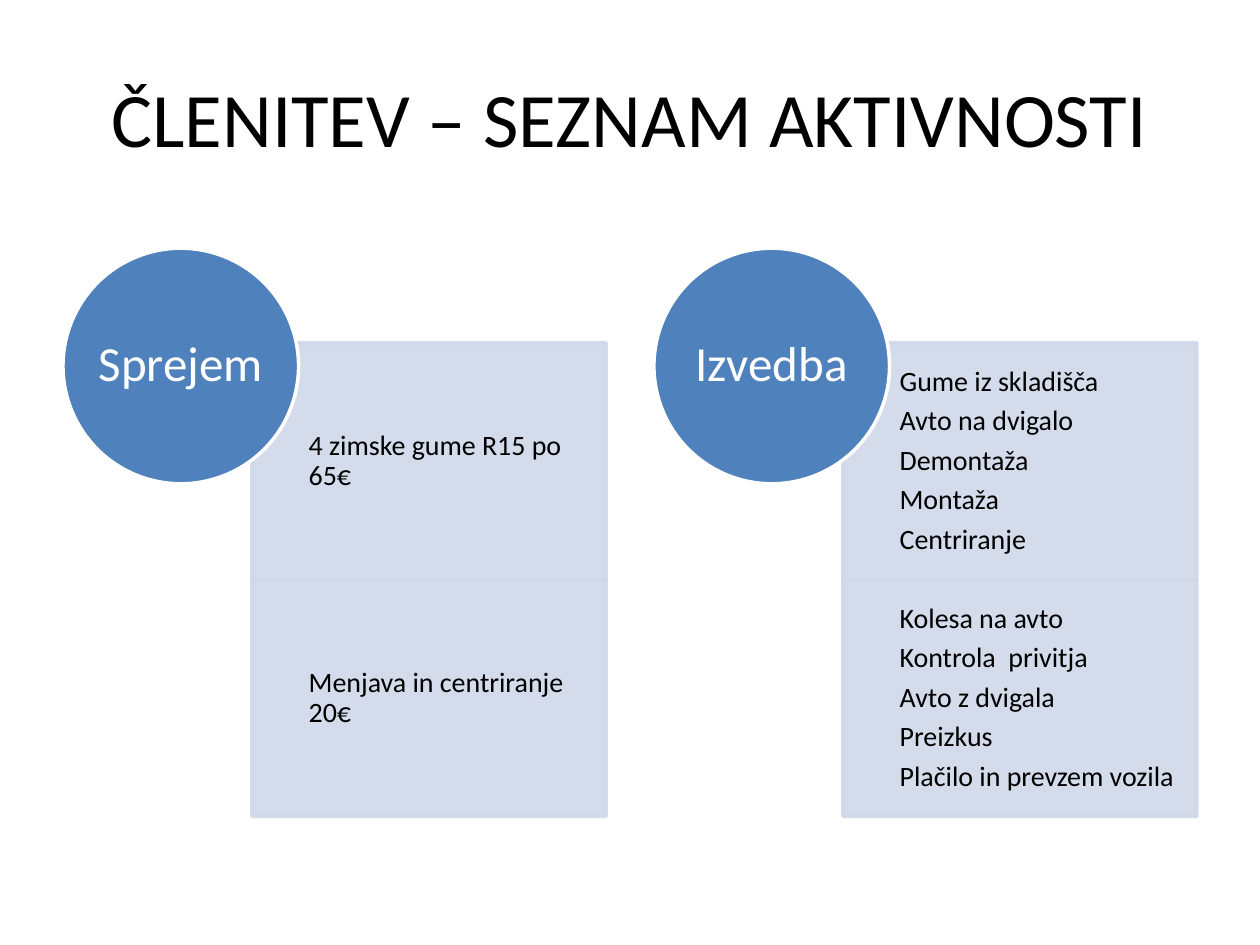
from lxml.etree import SubElement
from pptx import Presentation
from pptx.dml.color import RGBColor
from pptx.enum.shapes import MSO_SHAPE as SHAPE
from pptx.enum.text import MSO_ANCHOR as ANCHOR, PP_ALIGN as ALIGN
from pptx.oxml.ns import qn
from pptx.util import Inches, Pt

FONT = "Calibri"
BLACK, WHITE, BLUE, PALE = "000000", "FFFFFF", "4F81BD", "D0D8E8"
GROUP_LEFT, GROUP_STEP = 0.5, 4.69
CIRCLE_TOP, CIRCLE_SIZE = 1.97, 1.87
BOX_OFFSET, BOX_TOP, BOX_WIDTH, BOX_HEIGHT = 1.5, 2.72, 2.81, 1.88
GROUPS = [
    ("Sprejem", [["4 zimske gume R15 po 65€"], ["Menjava in centriranje 20€"]]),
    ("Izvedba", [
        ["Gume iz skladišča", "Avto na dvigalo", "Demontaža", "Montaža", "Centriranje"],
        ["Kolesa na avto", "Kontrola  privitja", "Avto z dvigala", "Preizkus",
         "Plačilo in prevzem vozila"],
    ]),
]


def paint(fmt, color, alpha=None):
    """Apply a solid colour, with optional opacity in percent, to a fill."""
    fmt.solid()
    fmt.fore_color.rgb = RGBColor.from_string(color)
    if alpha is not None:
        clr = fmt._xPr.find(qn("a:solidFill"))[0]
        SubElement(clr, qn("a:alpha")).set("val", str(alpha * 1000))


def write(sp, lines, size, color, align, insets, spacing=None, after=0):
    """Fill a shape with one paragraph per line."""
    tf = sp.text_frame
    tf.word_wrap = True
    tf.vertical_anchor = ANCHOR.MIDDLE
    tf.margin_left, tf.margin_top, tf.margin_right, tf.margin_bottom = map(Inches, insets)
    for i, line in enumerate(lines):
        p = tf.add_paragraph() if i else tf.paragraphs[0]
        p.alignment = align
        p.line_spacing = spacing
        p.space_after = Pt(after)
        r = p.add_run()
        r.text = line
        r.font.name = FONT
        r.font.size = Pt(size)
        r.font.color.rgb = RGBColor.from_string(color)


def add_title(s, text):
    """Add the centred slide title."""
    sp = s.shapes.add_textbox(*map(Inches, (0.5, 0.3, 9, 1.25)))
    write(sp, [text], 44, BLACK, ALIGN.CENTER, (0.1, 0.05, 0.1, 0.05))


def add_outlined(s, kind, box, fill, line, alpha=None):
    """Add a preset shape with a fill and a 2 pt outline."""
    sp = s.shapes.add_shape(kind, *map(Inches, box))
    sp.shadow.inherit = False
    paint(sp.fill, fill, alpha)
    paint(sp.line.fill, line, alpha)
    sp.line.width = Pt(2)
    return sp


def add_group(s, left, heading, boxes):
    """Add stacked activity boxes with a heading circle over their corner."""
    for i, lines in enumerate(boxes):
        box = (left + BOX_OFFSET, BOX_TOP + i * BOX_HEIGHT, BOX_WIDTH, BOX_HEIGHT)
        sp = add_outlined(s, SHAPE.RECTANGLE, box, PALE, PALE, 90)
        write(sp, lines, 16, BLACK, ALIGN.LEFT, (0.45, 0.12, 0.12, 0.12), 0.9, 5.3)
    circle = (left, CIRCLE_TOP, CIRCLE_SIZE, CIRCLE_SIZE)
    sp = add_outlined(s, SHAPE.OVAL, circle, BLUE, WHITE)
    write(sp, [heading], 28, WHITE, ALIGN.CENTER, (0, 0, 0, 0), 0.9)


def main():
    """Build and save the slide."""
    prs = Presentation()
    prs.slide_width, prs.slide_height = Inches(10), Inches(7.5)
    s = prs.slides.add_slide(prs.slide_layouts[6])
    add_title(s, "ČLENITEV – SEZNAM AKTIVNOSTI")
    for i, (heading, boxes) in enumerate(GROUPS):
        add_group(s, GROUP_LEFT + i * GROUP_STEP, heading, boxes)
    prs.save("out.pptx")


if __name__ == "__main__":
    main()
